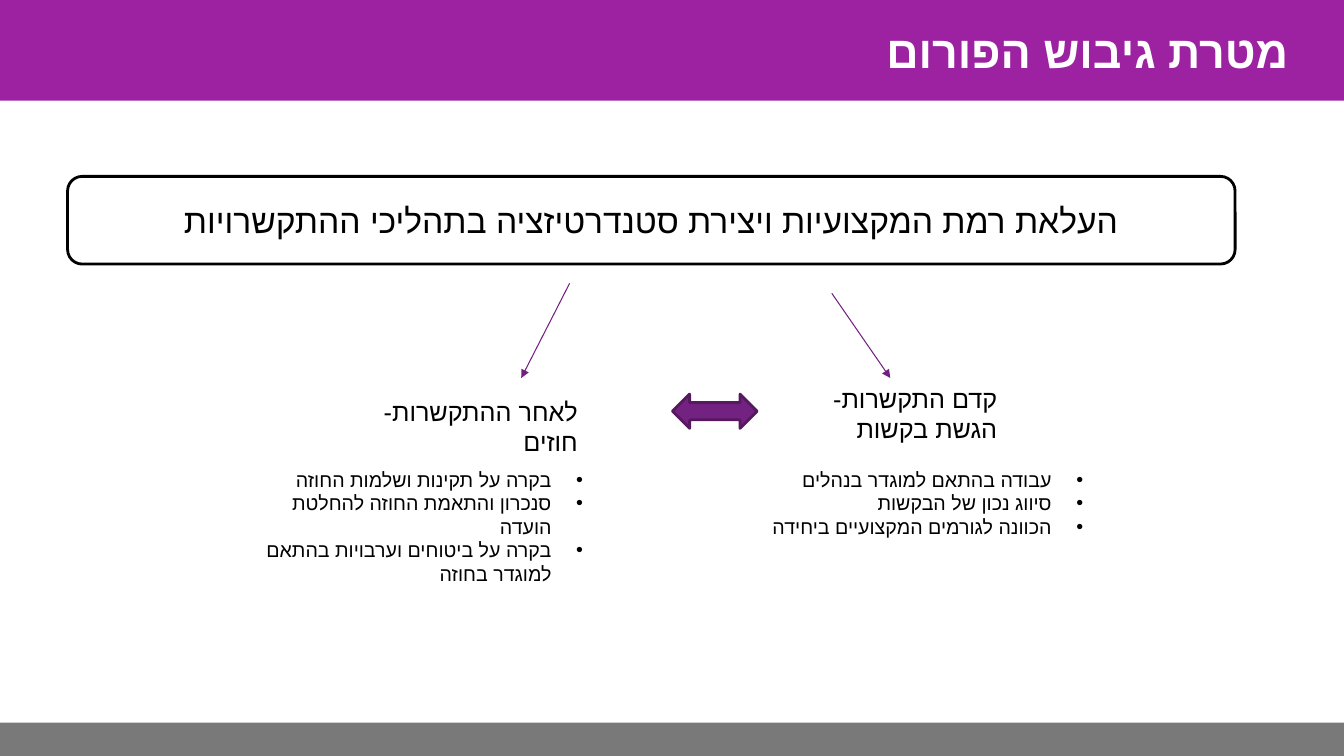
"""Build the slide on the goals of forming the procurement forum."""
from dataclasses import dataclass

from lxml import etree
from pptx import Presentation
from pptx.dml.color import RGBColor
from pptx.enum import shapes, text
from pptx.oxml import ns
from pptx.util import Inches, Pt


@dataclass(frozen=True)
class Theme:
    font: str = "Arial"
    black: str = "000000"
    white: str = "FFFFFF"
    banner: str = "9C22A2"
    footer: str = "797979"
    link: str = "731F81"
    exchange: str = "742282"
    exchange_edge: str = "561960"
    title_size: int = 32
    goal_size: int = 24
    heading_size: int = 18
    detail_size: int = 14


theme = Theme()
prs = Presentation()
prs.slide_width, prs.slide_height = Inches(13.33), Inches(7.5)
slide = prs.slides.add_slide(prs.slide_layouts[6])


def add_block(kind, box, fill, edge=None):
    block = slide.shapes.add_shape(kind, *map(Inches, box))
    block.shadow.inherit = False
    block.fill.solid()
    block.fill.fore_color.rgb = RGBColor.from_string(fill)
    if edge:
        block.line.color.rgb = RGBColor.from_string(edge)
        block.line.width = Pt(2)
    else:
        block.line.fill.background()
    return block


def write_hebrew(holder, lines, size, color=theme.black, align=text.PP_ALIGN.RIGHT,
                 anchor=text.MSO_ANCHOR.TOP, bold=False, bullets=False):
    frame = holder.text_frame
    frame.word_wrap = True
    frame.vertical_anchor = anchor
    frame.text = "\n".join(lines)
    for paragraph in frame.paragraphs:
        paragraph.alignment = align
        properties = paragraph._p.get_or_add_pPr()
        properties.set("rtl", "1")
        if bullets:
            properties.set("marL", str(Inches(0.31)))
            properties.set("indent", str(Inches(-0.31)))
            etree.SubElement(properties, ns.qn("a:buFont")).set("typeface", theme.font)
            etree.SubElement(properties, ns.qn("a:buChar")).set("char", "•")
        for run in paragraph.runs:
            run.font.name = theme.font
            run.font.size = Pt(size)
            run.font.bold = bold
            run.font.color.rgb = RGBColor.from_string(color)
            complex_font = etree.SubElement(run._r.get_or_add_rPr(), ns.qn("a:cs"))
            complex_font.set("typeface", theme.font)


add_block(shapes.MSO_SHAPE.RECTANGLE, (0, 0, 13.33, 1), theme.banner)
add_block(shapes.MSO_SHAPE.RECTANGLE, (0, 7.17, 13.33, 0.33), theme.footer)

title = slide.shapes.add_textbox(*map(Inches, (0.46, 0.07, 12.42, 0.87)))
write_hebrew(title, ["מטרת גיבוש הפורום"], theme.title_size, theme.white,
             anchor=text.MSO_ANCHOR.MIDDLE, bold=True)

goal = add_block(shapes.MSO_SHAPE.ROUNDED_RECTANGLE, (0.67, 1.75, 11.58, 0.87),
                 theme.white, theme.black)
write_hebrew(goal, ["העלאת רמת המקצועיות ויצירת סטנדרטיזציה בתהליכי ההתקשרויות"],
             theme.goal_size, align=text.PP_ALIGN.CENTER, anchor=text.MSO_ANCHOR.MIDDLE)

add_block(shapes.MSO_SHAPE.LEFT_RIGHT_ARROW, (6.67, 3.91, 0.84, 0.34),
          theme.exchange, theme.exchange_edge)

stages = [
    ("קדם התקשרות- הגשת בקשות", (7.69, 3.75, 2.3, 0.71),
     ["עבודה בהתאם למוגדר בנהלים", "סיווג נכון של הבקשות",
      "הכוונה לגורמים המקצועיים ביחידה"],
     (7.42, 4.59, 3.42, 0.81), (8.25, 2.91, 8.83, 3.75)),
    ("לאחר ההתקשרות- חוזים", (3.53, 3.88, 2.3, 0.71),
     ["בקרה על תקינות ושלמות החוזה", "סנכרון והתאמת החוזה להחלטת הועדה",
      "בקרה על ביטוחים וערבויות בהתאם למוגדר בחוזה"],
     (2.46, 4.59, 3.42, 1.99), (5.65, 2.81, 5.17, 3.75)),
]
for stage, stage_box, tasks, tasks_box, ends in stages:
    link = slide.shapes.add_connector(shapes.MSO_CONNECTOR.STRAIGHT, *map(Inches, ends))
    link.line.color.rgb = RGBColor.from_string(theme.link)
    link.line.width = Pt(0.75)
    etree.SubElement(link.line._get_or_add_ln(), ns.qn("a:tailEnd")).set("type", "triangle")
    etree.SubElement(link._element.spPr, ns.qn("a:effectLst"))

    heading = slide.shapes.add_textbox(*map(Inches, stage_box))
    write_hebrew(heading, [stage], theme.heading_size)
    details = slide.shapes.add_textbox(*map(Inches, tasks_box))
    write_hebrew(details, tasks, theme.detail_size, bullets=True)

prs.save("out.pptx")
